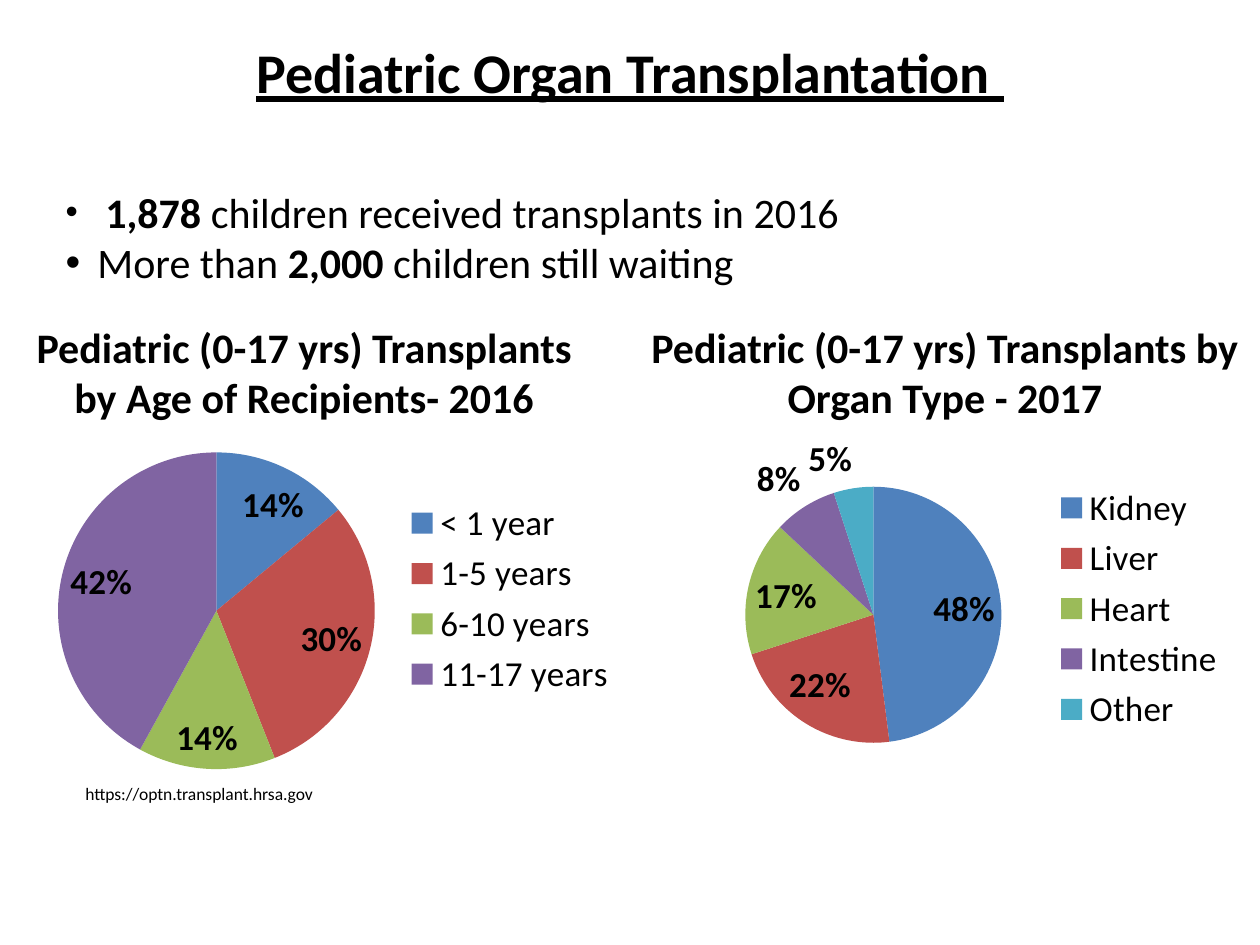
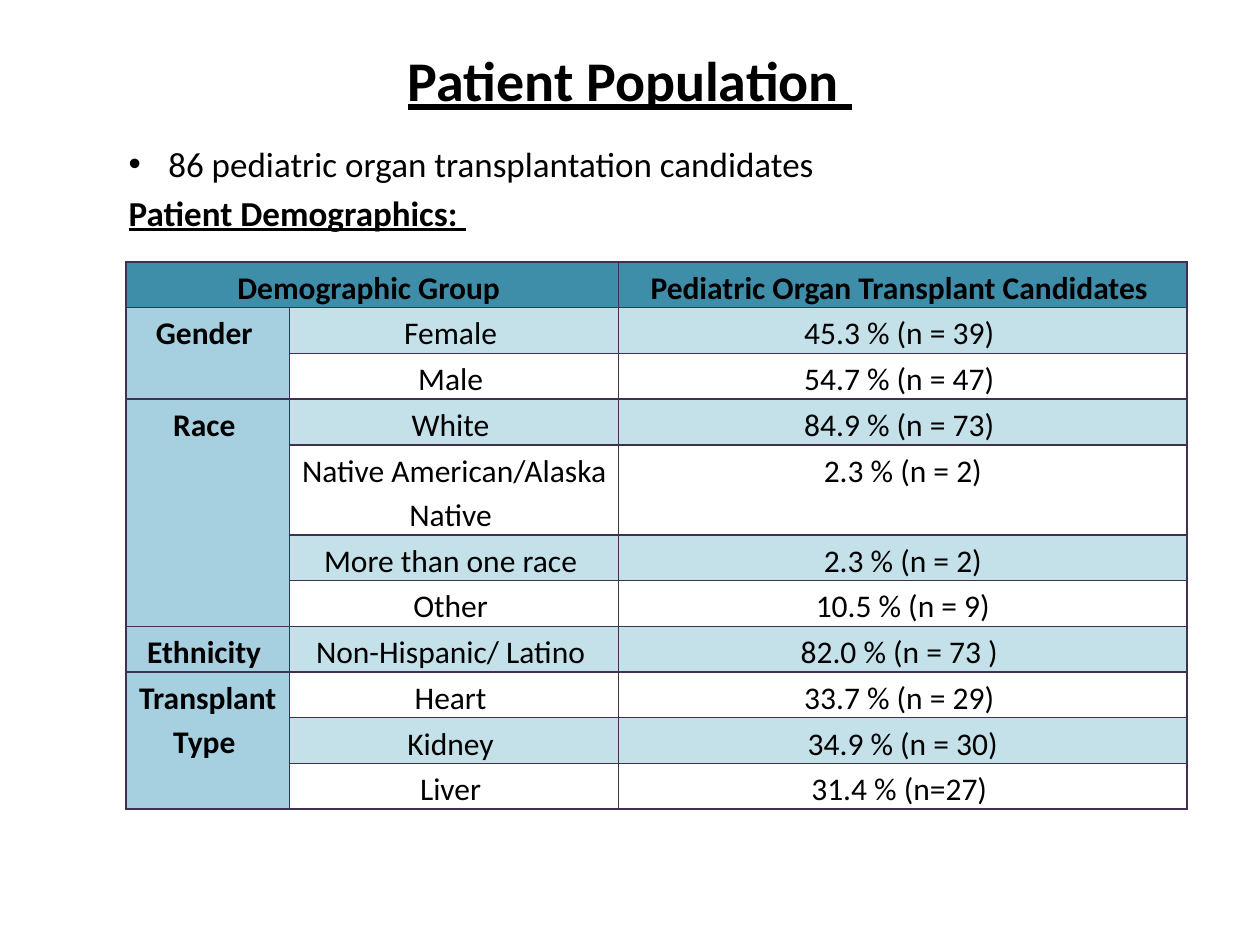
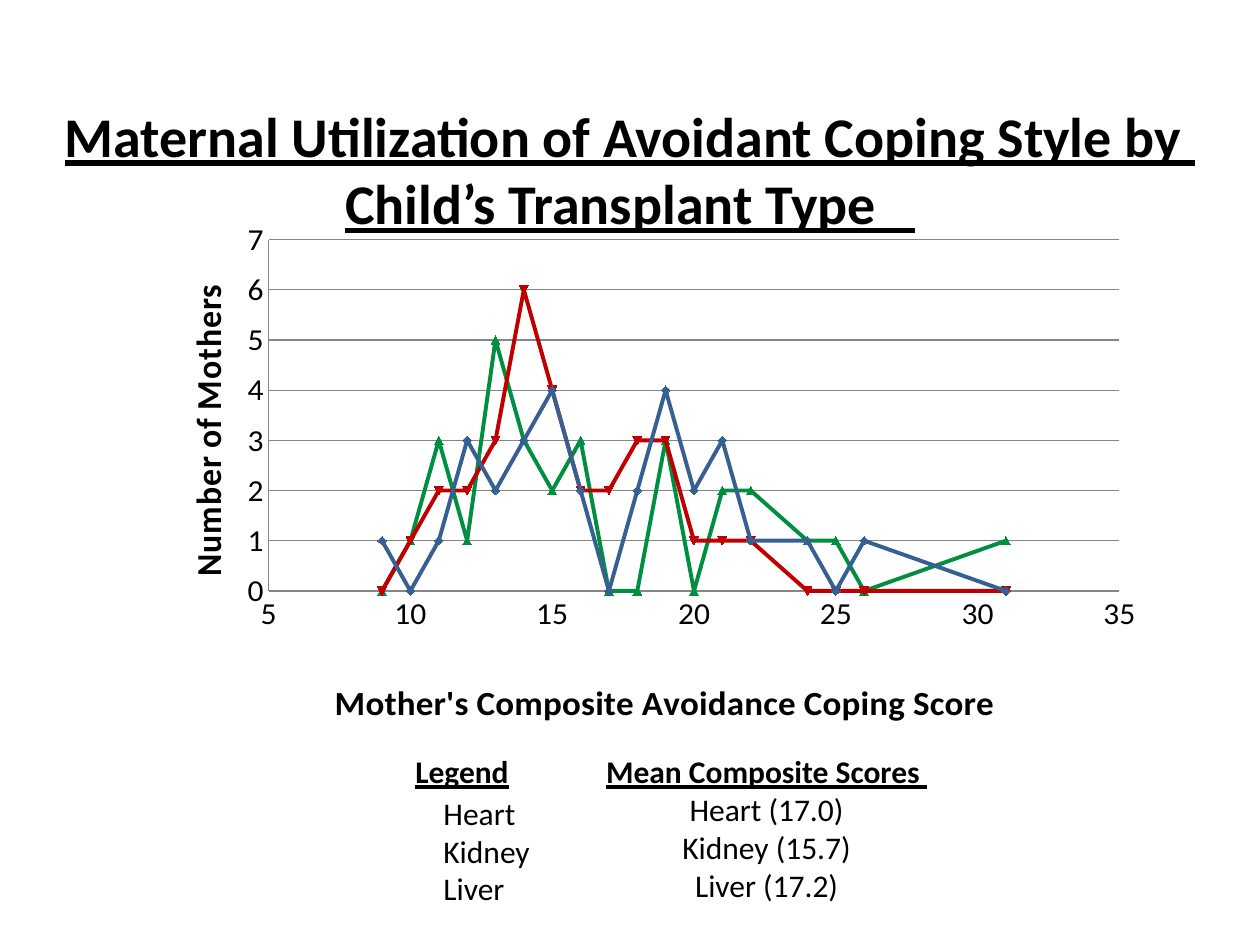
from lxml import etree
from pptx import Presentation
from pptx.chart.data import CategoryChartData, XyChartData
from pptx.dml.color import RGBColor
from pptx.enum.chart import (XL_CHART_TYPE, XL_LABEL_POSITION, XL_LEGEND_POSITION,
                             XL_MARKER_STYLE, XL_TICK_MARK)
from pptx.enum.text import MSO_ANCHOR, MSO_AUTO_SIZE, PP_ALIGN
from pptx.oxml.ns import qn
from pptx.util import Cm, Pt

FONT = "Calibri"
HUES = {
    "text": "000000", "white": "FFFFFF", "grid": "868686",
    "head": "3E8EA9", "group": "A6D0DF", "band": "C4E0E9", "edge": "403152",
    "heart": "376092", "kidney": "C00000", "liver": "008E40",
}
SLICES = ["4F81BD", "C0504D", "9BBB59", "8064A2", "4BACC6"]
BOLD = {"bold": True}
HEAD = {"bold": True, "underline": True}


def color(name):
    return RGBColor.from_string(HUES.get(name, name))


def style(font, size, **marks):
    values = {"name": FONT, "size": Pt(size), **marks}
    for key, value in values.items():
        setattr(font, key, value)
    font.color.rgb = color("text")


def place(shape, box):
    for side, value in zip(("left", "top", "width", "height"), box):
        setattr(shape, side, Cm(value))


def write(frame, lines, size, align=PP_ALIGN.LEFT, **marks):
    """Fill a frame; a line is a string or a list of (text, font values) runs."""
    frame.word_wrap = True
    for n, line in enumerate(lines):
        para = frame.add_paragraph() if n else frame.paragraphs[0]
        para.alignment = align
        for text, extra in ([(line, {})] if isinstance(line, str) else line):
            run = para.add_run()
            run.text = text
            style(run.font, **{"size": size, **marks, **extra})


def add_title(slide, box, *lines):
    title = slide.shapes.title
    place(title, box)
    frame = title.text_frame
    frame.auto_size = MSO_AUTO_SIZE.NONE
    frame.vertical_anchor = MSO_ANCHOR.MIDDLE
    write(frame, lines, 32, PP_ALIGN.CENTER, **HEAD)


def add_text(slide, box, lines, size, align=PP_ALIGN.LEFT, **marks):
    shape = slide.shapes.add_textbox(*map(Cm, box))
    write(shape.text_frame, lines, size, align, **marks)


def add_list(slide, box, lines, size, space):
    body = slide.placeholders[1]
    place(body, box)
    frame = body.text_frame
    frame.auto_size = MSO_AUTO_SIZE.NONE
    write(frame, lines, size)
    for para in frame.paragraphs:
        para.space_before = Pt(space)
        indent(para, 0.64)
    return frame.paragraphs


def indent(para, width):
    props = para._p.get_or_add_pPr()
    props.set("marL", str(Cm(width)))
    props.set("indent", str(-Cm(width)))
    return props


def lay_out(parent, spot, **parts):
    """Give a chart part a fixed place, in shares of the chart's size."""
    for old in parent.findall(qn("c:layout")):
        parent.remove(old)
    layout = etree.Element(qn("c:layout"))
    manual = etree.SubElement(layout, qn("c:manualLayout"))
    values = {"xMode": "edge", "yMode": "edge", **parts}
    if "w" in parts:
        values = {"layoutTarget": "inner", **values}
    for key, value in values.items():
        etree.SubElement(manual, qn("c:" + key)).set("val", str(value))
    parent.insert(spot, layout)


def add_chart(slide, kind, box, data):
    chart = slide.shapes.add_chart(kind, *map(Cm, box), data).chart
    chart.has_title = False
    style(chart.font, 10)
    return chart


def add_pie(slide, box, shares):
    data = CategoryChartData()
    data.categories = list(shares)
    data.add_series("Series 1", list(shares.values()))
    chart = add_chart(slide, XL_CHART_TYPE.PIE, box, data)
    chart.has_legend = True
    chart.legend.position = XL_LEGEND_POSITION.RIGHT
    chart.legend.include_in_layout = False
    style(chart.legend.font, 20)
    plot = chart.plots[0]
    plot.vary_by_categories = True
    for n, hue in enumerate(SLICES[:len(shares)]):
        fill = plot.series[0].points[n].format.fill
        fill.solid()
        fill.fore_color.rgb = color(hue)
    plot.has_data_labels = True
    labels = plot.data_labels
    values = {"show_percentage": True, "show_value": False, "number_format": "0%",
              "number_format_is_linked": False, "position": XL_LABEL_POSITION.BEST_FIT}
    for key, value in values.items():
        setattr(labels, key, value)
    style(labels.font, 20, bold=True)
    return chart


def edge_cell(cell):
    props = cell._tc.get_or_add_tcPr()
    for n, side in enumerate(("lnL", "lnR", "lnT", "lnB")):
        line = etree.Element(qn("a:" + side), w=str(Pt(1)))
        fill = etree.SubElement(line, qn("a:solidFill"))
        etree.SubElement(fill, qn("a:srgbClr"), val=HUES["edge"])
        props.insert(n, line)


def fill_cell(cell, text, hue, bold):
    sides = {"left": 0.05, "right": 0.05, "top": 0.03, "bottom": 0}
    for side, value in sides.items():
        setattr(cell, "margin_" + side, Cm(value))
    cell.fill.solid()
    cell.fill.fore_color.rgb = color(hue)
    edge_cell(cell)
    if text:
        write(cell.text_frame, [text], 18, PP_ALIGN.CENTER, bold=bold)
        para = cell.text_frame.paragraphs[0]
        para.line_spacing = 1.15
        para.space_after = Pt(10)


def add_grid(slide, box, widths, heads, groups):
    """Draw a table whose first column spans the rows of each group."""
    rows = [(name if n == 0 else "", *pair)
            for name, pairs in groups for n, pair in enumerate(pairs)]
    shape = slide.shapes.add_table(len(rows) + 1, 3, *map(Cm, box))
    table = shape.table
    for column, width in zip(table.columns, widths):
        column.width = Cm(width)
    for row in table.rows:
        row.height = Cm(0.9)
    for c, text in enumerate(heads):
        fill_cell(table.cell(0, c), text, "head", True)
    for r, row in enumerate(rows, 1):
        band = "band" if row[1] in BANDED else "white"
        for c, text in enumerate(row):
            fill_cell(table.cell(r, c), text, band if c else "group", c == 0)
    table.cell(0, 0).merge(table.cell(0, 1))
    top = 1
    for name, pairs in groups:
        end = top + len(pairs) - 1
        if end > top:
            table.cell(top, 0).merge(table.cell(end, 0))
        top = end + 1


def set_axis(axis, title, low, high, step, x, y):
    values = {"minimum_scale": low, "maximum_scale": high, "major_unit": step,
              "major_tick_mark": XL_TICK_MARK.NONE, "minor_tick_mark": XL_TICK_MARK.NONE,
              "has_major_gridlines": False, "has_title": True}
    for key, value in values.items():
        setattr(axis, key, value)
    style(axis.tick_labels.font, 18)
    axis.format.line.color.rgb = color("grid")
    frame = axis.axis_title.text_frame
    run = frame.paragraphs[0].add_run()
    run.text = title
    style(run.font, 20, bold=True)
    lay_out(axis.axis_title.element, 1, x=x, y=y)


def add_lines(slide, box, scores, counts):
    data = XyChartData()
    for n, values in enumerate(counts.values(), 1):
        series = data.add_series(f"Series {n}")
        for point in zip(scores, values):
            series.add_data_point(*point)
    chart = add_chart(slide, XL_CHART_TYPE.XY_SCATTER_LINES, box, data)
    chart.has_legend = False
    lay_out(chart.element.find(".//" + qn("c:plotArea")), 0,
            x=0.131, y=0.038, w=0.84, h=0.708)
    plot = chart.plots[0]
    plot.vary_by_categories = False
    for series, organ in zip(plot.series, counts):
        series.smooth = False
        series.format.line.width = Pt(2.25)
        series.format.line.color.rgb = color(organ)
        mark = series.marker
        mark.style = XL_MARKER_STYLE.AUTOMATIC
        mark.size = 5
        mark.format.fill.solid()
        mark.format.fill.fore_color.rgb = color(organ)
        mark.format.line.color.rgb = color(organ)
    across, up = chart.category_axis, chart.value_axis
    set_axis(across, "Mother's Composite Avoidance Coping Score", 5, 35, 5, 0.19, 0.91)
    set_axis(up, "Number of Mothers ", 0, 7, 1, 0.04, 0.12)
    up.has_major_gridlines = True
    up.major_gridlines.format.line.color.rgb = color("grid")
    turn = up.axis_title.element.find(".//" + qn("a:bodyPr"))
    turn.set("rot", "-5400000")
    turn.set("vert", "horz")


AGES = {"< 1 year": 14, "1-5 years": 30, "6-10 years": 14, "11-17 years": 42}
ORGANS = {"Kidney ": 48, "Liver": 22, "Heart ": 17, "Intestine": 8, "Other": 5}
GROUPS = [
    ("Gender ", [("Female ", "45.3 % (n = 39) "), ("Male ", "54.7 % (n = 47) ")]),
    ("Race ", [("White ", "84.9 % (n = 73) "),
               ("Native American/Alaska Native ", "2.3 % (n = 2)"),
               ("More than one race ", "2.3 % (n = 2)"),
               ("Other ", "10.5 % (n = 9)")]),
    ("Ethnicity ", [("Non-Hispanic/ Latino ", "82.0 % (n = 73 ) ")]),
    ("Transplant Type ", [("Heart ", "33.7 % (n = 29) "),
                          ("Kidney ", " 34.9 % (n = 30) "),
                          ("Liver ", "31.4 % (n=27) ")]),
]
BANDED = {"Female ", "White ", "More than one race ", "Non-Hispanic/ Latino ", "Kidney "}
SCORES = [*range(9, 23), 24, 25, 26, 31]
COUNTS = {
    "heart": [1, 0, 1, 3, 2, 3, 4, 2, 0, 2, 4, 2, 3, 1, 1, 0, 1, 0],
    "kidney": [0, 1, 2, 2, 3, 6, 4, 2, 2, 3, 3, 1, 1, 1, 0, 0, 0, 0],
    "liver": [0, 1, 3, 1, 5, 3, 2, 3, 0, 0, 3, 0, 2, 2, 1, 1, 0, 1],
}


def show_need(slide):
    add_title(slide, (0, 0, 25.4, 2.86), "Pediatric Organ Transplantation ")
    add_list(slide, (1.07, 3.63, 23.5, 2.6), [
        [(" ", {"size": 20}), ("1,878 ", BOLD), ("children received transplants in 2016", {})],
        [("More than ", {}), ("2,000 ", BOLD), ("children still waiting", {})],
    ], 24, 0)
    for left, width, topic in ((0, 12.27, "by Age of Recipients- 2016"),
                               (12.7, 12.7, "by Organ Type - 2017")):
        add_text(slide, (left, 6.35, width, 2.31),
                 ["Pediatric (0-17 yrs) Transplants " + topic], 24, PP_ALIGN.CENTER, **BOLD)
    add_text(slide, (1.47, 15.67, 11.43, 0.69), ["https://optn.transplant.hrsa.gov"], 10)
    add_pie(slide, (12.7, 8.46, 12.27, 7.62), ORGANS)
    ages = add_pie(slide, (0, 8.26, 12.7, 7.62), AGES)
    lay_out(ages.element.find(".//" + qn("c:plotArea")), 0,
            x=0.071, y=0.113, w=0.545, h=0.838)


def show_group(slide):
    add_title(slide, (0, 0, 25.4, 3.18), "Patient Population ")
    paras = add_list(slide, (2.34, 2.74, 20.75, 2.54), [
        " 86 pediatric organ transplantation candidates",
        [("Patient Demographics: ", HEAD)],
    ], 20, 4)
    etree.SubElement(indent(paras[1], 0.95), qn("a:buNone"))
    add_grid(slide, (2.54, 5.28, 21.39, 9.9), (3.3, 6.63, 11.46),
             ("Demographic Group ", "", "Pediatric Organ Transplant Candidates "), GROUPS)


def show_style(slide):
    add_lines(slide, (2.74, 4.45, 20.42, 10.36), SCORES, COUNTS)
    add_title(slide, (0, 1.9, 25.4, 3), "Maternal Utilization of Avoidant Coping Style by ",
              "Child’s Transplant Type   ")
    add_text(slide, (8.69, 15.88, 2.97, 2.57), ["Heart", "Kidney", "Liver"], 18)
    add_text(slide, (11.86, 15.04, 7.19, 3.33),
             [[("Mean Composite Scores ", HEAD)],
              "Heart (17.0)", "Kidney (15.7)", "Liver (17.2)"], 18, PP_ALIGN.CENTER)
    add_text(slide, (6.99, 15.04, 4.65, 1.02), ["Legend"], 18, PP_ALIGN.CENTER, **HEAD)


def main():
    deck = Presentation()
    deck.slide_width, deck.slide_height = Cm(25.4), Cm(19.05)
    for show, layout in ((show_need, 1), (show_group, 1), (show_style, 5)):
        show(deck.slides.add_slide(deck.slide_layouts[layout]))
    deck.save("out.pptx")


if __name__ == "__main__":
    main()
